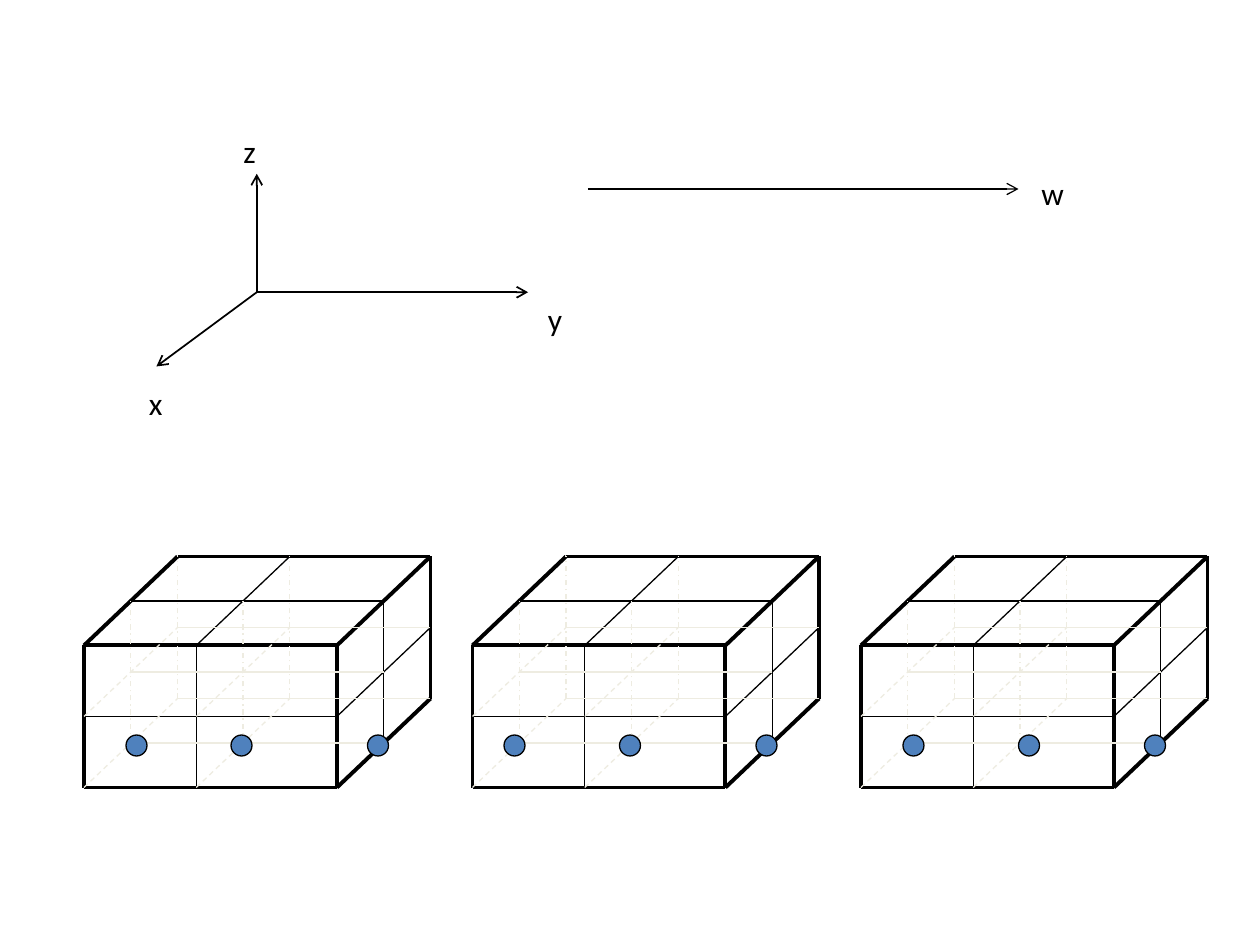
from dataclasses import dataclass
from itertools import product

from lxml import etree
from pptx import Presentation, util as u
from pptx.dml.color import RGBColor
from pptx.enum import dml, shapes, text
from pptx.oxml import ns

UNIT = u.Inches(1) / 12  # grid of 120 columns by 90 rows


@dataclass(frozen=True)
class Theme:
    ink: str = "000000"
    hidden: str = "EEECE1"
    dot: str = "4F81BD"
    font: str = "Calibri"
    label_size: float = 18
    bold: float = 2.25
    thin: float = 0.75
    hair: float = 0.25
    axis: float = 1


THEME = Theme()


def grid(*cells):
    """Turn columns or rows into slide lengths."""
    return [u.Emu(round(cell * UNIT)) for cell in cells]


def set_values(target, values):
    for name, value in values.items():
        setattr(target, name, value)


def add_line(parent, start, end, width, color=THEME.ink, dash=None, arrow=False):
    connector = parent.add_connector(
        shapes.MSO_CONNECTOR.STRAIGHT, *grid(*start, *end))
    connector.line.color.rgb = RGBColor.from_string(color)
    set_values(connector.line, {"width": u.Pt(width), "dash_style": dash})
    if arrow:
        line_xml = connector.line._get_or_add_ln()
        etree.SubElement(line_xml, ns.qn("a:tailEnd"), type="arrow")
    etree.SubElement(connector._element.spPr, ns.qn("a:effectLst"))


def add_label(slide, wording, column, row, width):
    frame = slide.shapes.add_textbox(*grid(column, row, width, 4.8)).text_frame
    set_values(frame, {"word_wrap": True,
                       "auto_size": text.MSO_AUTO_SIZE.SHAPE_TO_FIT_TEXT})
    run = frame.paragraphs[0].add_run()
    run.text = wording
    set_values(run.font, {"name": THEME.font, "size": u.Pt(THEME.label_size)})
    run.font.color.rgb = RGBColor.from_string(THEME.ink)


def lattice_edges():
    """Yield every line of the 2 x 2 x 2 lattice with its style, visible ones first."""
    dashes = {"across": None, "depth": dml.MSO_LINE.DASH,
              "height": dml.MSO_LINE.DASH_DOT}
    # The face of the box that can be seen at one end of each axis
    seen_face = {"across": 2, "depth": 0, "height": 2}
    edges = []
    for axis, first, second in product(dashes, range(3), range(3)):
        others = [name for name in dashes if name != axis]
        fixed = dict(zip(others, (first, second)))
        visible = any(fixed[name] == seen_face[name] for name in others)
        if visible:
            width = THEME.thin if 1 in fixed.values() else THEME.bold
            style = {"width": width}
        else:
            back_middle = fixed == {"depth": 2, "height": 1}
            style = {"width": THEME.hair if back_middle else THEME.thin,
                     "color": THEME.hidden, "dash": dashes[axis]}
        edges.append((not visible, {axis: 0, **fixed}, {axis: 2, **fixed}, style))
    return [edge[1:] for edge in sorted(edges, key=lambda edge: edge[0])]


def draw_box(slide, left, top, width, height):
    """Divided box in oblique view, filling the given area."""
    across_steps = (0, 0.324 * width, 0.73 * width)
    slant, rise, wall = 0.27 * width, 0.385 * height, 0.615 * height

    def project(point):
        depth = point["depth"] / 2
        return (left + across_steps[point["across"]] + slant * depth,
                top + height - rise * depth - wall * point["height"] / 2)

    group = slide.shapes.add_group_shape()
    for start, end, style in lattice_edges():
        add_line(group.shapes, project(start), project(end), **style)


def draw_dots(slide, columns, row, size):
    for column in columns:
        dot = slide.shapes.add_shape(
            shapes.MSO_SHAPE.OVAL, *grid(column, row, size, size))
        dot.shadow.inherit = False
        dot.fill.solid()
        dot.fill.fore_color.rgb = RGBColor.from_string(THEME.dot)
        dot.line.color.rgb = RGBColor.from_string(THEME.ink)
        dot.line.width = u.Pt(THEME.thin)


def draw_axes(slide, left, top, width, height):
    """Three axes from one origin, with tips on the edges of the area."""
    origin = (left + 0.27 * width, top + 0.615 * height)
    tips = ((origin[0], top), (left, top + height), (left + width, origin[1]))
    for tip in tips:
        add_line(slide.shapes, origin, tip, THEME.axis, arrow=True)


def main():
    presentation = Presentation()
    set_values(presentation, {"slide_width": u.Inches(10),
                              "slide_height": u.Inches(7.5)})
    slide = presentation.slides.add_slide(presentation.slide_layouts[6])

    # Axes x, y, z and the separate w axis
    draw_axes(slide, 14.9, 16.55, 35.4, 18.35)
    add_line(slide.shapes, (56, 18), (97, 18), THEME.thin, arrow=True)
    for label in (("w", 98, 16, 6), ("x", 13, 36, 6),
                  ("y", 51, 28, 4), ("z", 22, 12, 4)):
        add_label(slide, *label)

    # Row of boxes along w, each with its dots
    dot_columns = ((12, 22, 35), (48, 59, 72), (86, 97, 109))
    for index, columns in enumerate(dot_columns):
        draw_box(slide, 8 + 37 * index, 53, 33, 22)
        draw_dots(slide, columns, 70, 2)

    presentation.save("out.pptx")


if __name__ == "__main__":
    main()
